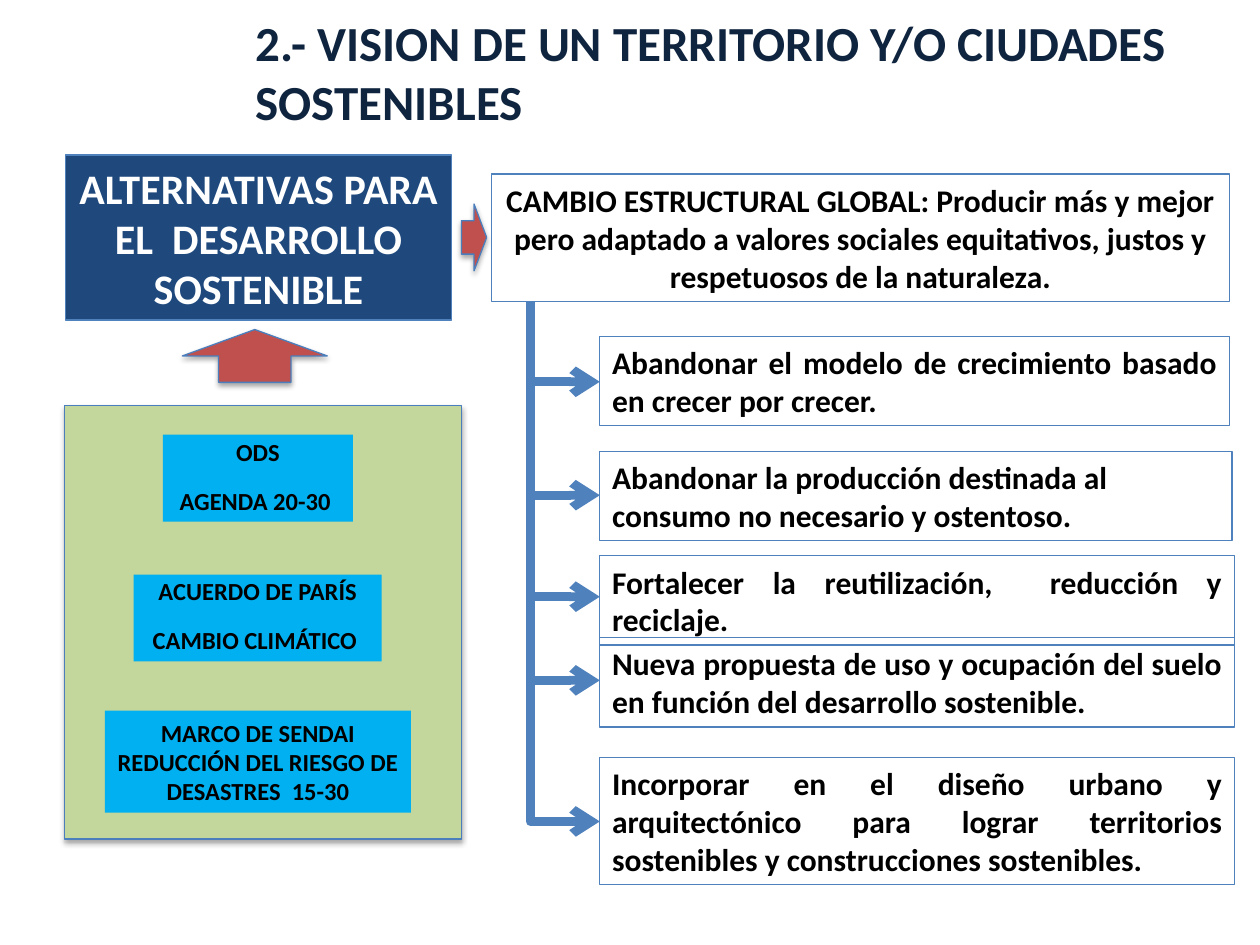
from collections import namedtuple
from dataclasses import dataclass

from lxml import etree
from pptx import Presentation
from pptx.dml.color import RGBColor
from pptx.enum.shapes import MSO_CONNECTOR as Connector, MSO_SHAPE as Preset
from pptx.enum.text import MSO_ANCHOR as Anchor, PP_ALIGN as Align
from pptx.oxml.ns import qn
from pptx.util import Pt

Box = namedtuple("Box", "left top width height")
Demand = namedtuple("Demand", "text top width height align bend_start bend_end")


@dataclass(frozen=True)
class Theme:
    """Colours, type sizes and line widths of the slide."""
    font: str = "Calibri"
    title_color: str = "0F243E"
    navy: str = "1F497D"
    blue: str = "4F81BD"
    edge: str = "4B7EBC"
    green: str = "C3D69B"
    cyan: str = "00B0F0"
    red: str = "C0504D"
    black: str = "000000"
    white: str = "FFFFFF"
    title: float = 28
    heading: float = 24
    body: float = 18
    label: float = 14
    thin: float = 0.75
    thick: float = 5


THEME = Theme()

DEMANDS = [
    Demand("Abandonar el modelo de crecimiento basado en crecer por crecer.",
           92.8, 360, 51.1, Align.JUSTIFY, 72.7, 118.8),
    Demand("Abandonar la producción destinada al consumo no necesario y ostentoso.",
           158.4, 361.4, 51.1, Align.LEFT, 118.8, 183.6),
    Demand("Fortalecer la reutilización,  reducción y reciclaje.",
           218.1, 362.9, 51.1, Align.JUSTIFY, 176.4, 241.6),
    Demand("Nueva propuesta de uso y ocupación del suelo en función del desarrollo sostenible.",
           264.9, 362.9, 51.1, Align.JUSTIFY, 224.6, 289.4),
    Demand("Incorporar en el diseño urbano y arquitectónico para lograr territorios "
           "sostenibles y construcciones sostenibles.",
           333.3, 362.9, 72.7, Align.JUSTIFY, 183.6, 370),
]

AGREEMENTS = [
    (["ODS", "AGENDA 20-30 "], Box(56.2, 16.6, 108.7, 49.7)),
    (["ACUERDO DE PARÍS", "CAMBIO CLIMÁTICO "], Box(39.6, 96.5, 141.8, 49.7)),
    (["MARCO DE SENDAI REDUCCIÓN DEL RIESGO DE DESASTRES  15-30"],
     Box(23.1, 174.3, 175, 58.3)),
]


def add_shadow(shape):
    """Give a shape a soft shadow straight below it."""
    effects = shape._element.spPr.find(qn("a:effectLst"))
    shadow = etree.SubElement(effects, qn("a:outerShdw"), blurRad="40000",
                              dist="23000", dir="5400000", rotWithShape="0")
    color = etree.SubElement(shadow, qn("a:srgbClr"), val=THEME.black)
    etree.SubElement(color, qn("a:alpha"), val="35000")


def add_block(slide, preset, box, fill=None, line=None, shadow=False):
    """Add a preset shape with its fill, outline and optional shadow."""
    shape = slide.shapes.add_shape(preset, *map(Pt, box))
    shape.shadow.inherit = False
    if fill:
        shape.fill.solid()
        shape.fill.fore_color.rgb = RGBColor.from_string(fill)
    else:
        shape.fill.background()
    if line:
        shape.line.color.rgb = RGBColor.from_string(line)
        shape.line.width = Pt(THEME.thin)
    else:
        shape.line.fill.background()
    if shadow:
        add_shadow(shape)
    return shape


def write(shape, texts, size, color, align, line_pitch=None):
    """Fill a shape with bold paragraphs, a blank pitch apart if one is given."""
    frame = shape.text_frame
    frame.word_wrap = True
    frame.vertical_anchor = Anchor.MIDDLE
    if align == Align.CENTER:
        frame.margin_left = frame.margin_right = Pt(6)
    for index, text in enumerate(texts):
        paragraph = frame.add_paragraph() if index else frame.paragraphs[0]
        paragraph.text = text
        paragraph.alignment = align
        if line_pitch:
            paragraph.line_spacing = Pt(line_pitch)
            if index:
                paragraph.space_before = Pt(line_pitch)
        font = paragraph.font
        font.name, font.size, font.bold = THEME.font, Pt(size), True
        font.color.rgb = RGBColor.from_string(color)


def add_elbow(slide, start_x, start_y, end_x, end_y):
    """Add an arrow that runs down and then turns right."""
    drop, run = end_y - start_y, end_x - start_x
    left = (start_x + end_x - drop) / 2
    top = (start_y + end_y - run) / 2
    connector = slide.shapes.add_connector(
        Connector.ELBOW, Pt(left + drop), Pt(top), Pt(left), Pt(top + run))
    connector.line.color.rgb = RGBColor.from_string(THEME.blue)
    connector.line.width = Pt(THEME.thick)
    properties = connector._element.spPr
    properties.find(qn("a:xfrm")).set("rot", "16200000")
    properties.find(qn("a:prstGeom")).set("prst", "bentConnector2")
    etree.SubElement(properties.find(qn("a:ln")), qn("a:tailEnd"), type="arrow")
    etree.SubElement(properties, qn("a:effectLst"))


def add_title(slide, box):
    """Place the slide title."""
    title = slide.shapes.add_textbox(*map(Pt, box))
    write(title, ["2.- VISION DE UN TERRITORIO Y/O CIUDADES SOSTENIBLES"],
          THEME.title, THEME.title_color, Align.LEFT)


def add_alternatives(slide, box):
    """Place the navy heading with the arrows beside and below it."""
    heading = add_block(slide, Preset.RECTANGLE, box, THEME.navy, THEME.blue)
    write(heading, ["ALTERNATIVAS PARA EL  DESARROLLO SOSTENIBLE"],
          THEME.heading, THEME.white, Align.CENTER)
    arrows = [
        (Preset.RIGHT_ARROW, Box(box.left + box.width + 5.8, box.top + 28, 14.4, 38.2)),
        (Preset.UP_ARROW, Box(box.left + 66.6, box.top + box.height + 5.4, 82.8, 30.2)),
    ]
    for preset, place in arrows:
        add_block(slide, preset, place, THEME.red, THEME.edge, shadow=True)


def add_agreements(slide, box):
    """Place the green panel of international agreements."""
    add_block(slide, Preset.RECTANGLE, box, THEME.green, THEME.edge, shadow=True)
    for texts, offset in AGREEMENTS:
        place = offset._replace(left=box.left + offset.left, top=box.top + offset.top)
        label = add_block(slide, Preset.RECTANGLE, place, THEME.cyan)
        pitch = THEME.label if len(texts) > 1 else None
        write(label, texts, THEME.label, THEME.black, Align.CENTER, pitch)


def add_change(slide, box):
    """Place the global change statement and the demands that branch from it."""
    statement = add_block(slide, Preset.RECTANGLE, box._replace(height=72.7), line=THEME.blue)
    write(statement, ["CAMBIO ESTRUCTURAL GLOBAL: Producir más y mejor pero adaptado a "
                      "valores sociales equitativos, justos y respetuosos de la naturaleza."],
          THEME.body, THEME.black, Align.CENTER)
    trunk, left = box.left + 22.2, box.left + 61.9
    for demand in DEMANDS:
        place = Box(left, box.top + demand.top, demand.width, demand.height)
        shape = add_block(slide, Preset.RECTANGLE, place, line=THEME.blue)
        write(shape, [demand.text], THEME.body, THEME.black, demand.align)
        add_elbow(slide, trunk, box.top + demand.bend_start, left, box.top + demand.bend_end)


def main():
    """Build the slide and save it."""
    presentation = Presentation()
    presentation.slide_width, presentation.slide_height = Pt(720), Pt(540)
    slide = presentation.slides.add_slide(presentation.slide_layouts[6])
    add_agreements(slide, Box(36.8, 231.8, 226.8, 247.7))
    add_alternatives(slide, Box(37.6, 88.6, 220.3, 94.3))
    add_change(slide, Box(280.8, 99.4, 421.9, 406))
    add_title(slide, Box(139, 3.6, 555.8, 74.9))
    presentation.save("out.pptx")


if __name__ == "__main__":
    main()
